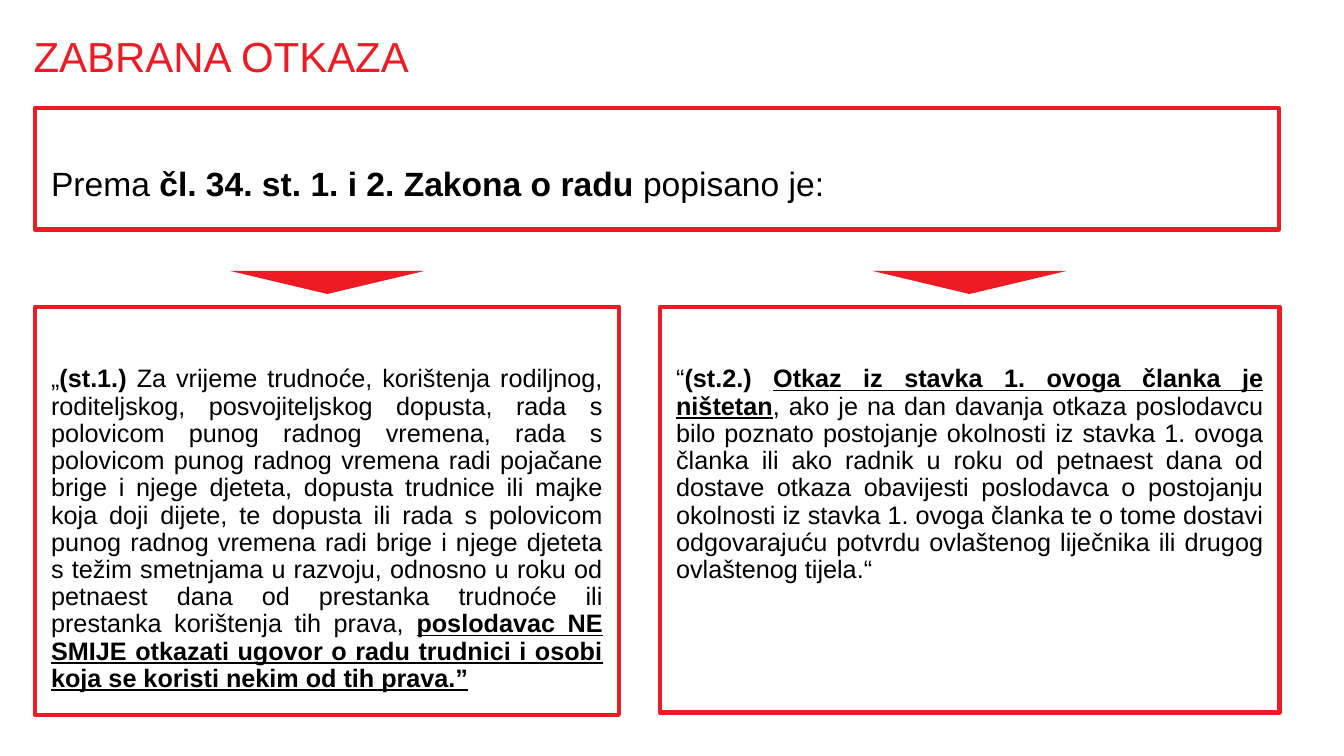
from pptx import Presentation
from pptx.dml.color import RGBColor
from pptx.enum.shapes import MSO_SHAPE
from pptx.enum.text import MSO_ANCHOR, MSO_AUTO_SIZE, PP_ALIGN
from pptx.util import Pt

RECTANGLE, TRIANGLE = MSO_SHAPE.RECTANGLE, MSO_SHAPE.ISOSCELES_TRIANGLE
TOP, MIDDLE = MSO_ANCHOR.TOP, MSO_ANCHOR.MIDDLE
LEFT, JUSTIFY = PP_ALIGN.LEFT, PP_ALIGN.JUSTIFY
NO_AUTOFIT = MSO_AUTO_SIZE.NONE

COLOURS = {"red": "ED1C24", "white": "FFFFFF", "black": "000000"}
PLAIN, BOLD, STRONG = (False, False), (True, False), (True, True)


class SlideBuilder:
    font = "Arial"
    box_margins = (11.5, 42.5, 11.5, 3.6)

    def __init__(self, page):
        self.page = page

    def colour(self, name):
        return RGBColor.from_string(COLOURS[name])

    def add_text(self, shape, spans, size, colour, align, margins, anchor):
        frame = shape.text_frame
        frame.word_wrap = True
        frame.auto_size = NO_AUTOFIT
        frame.vertical_anchor = anchor
        (frame.margin_left, frame.margin_top,
         frame.margin_right, frame.margin_bottom) = map(Pt, margins)
        para = frame.paragraphs[0]
        para.alignment = align
        para.line_spacing = 0.9
        para.space_before = Pt(0)
        for text, (bold, underline) in spans:
            span = para.add_run()
            span.text = text
            span.font.name = self.font
            span.font.size = Pt(size)
            span.font.bold = bold
            span.font.underline = underline
            span.font.color.rgb = self.colour(colour)

    def title(self, text, left, top, width, height):
        box = self.page.shapes.title
        box.left, box.top, box.width, box.height = map(Pt, (left, top, width, height))
        self.add_text(box, [(text, PLAIN)], 30, "red", LEFT, (0, 0, 0, 0), MIDDLE)

    def shape(self, kind, place, fill):
        shape = self.page.shapes.add_shape(kind, *map(Pt, place))
        shape.shadow.inherit = False
        shape.fill.solid()
        shape.fill.fore_color.rgb = self.colour(fill)
        return shape

    def framed_box(self, place, spans, size, align):
        box = self.shape(RECTANGLE, place, "white")
        box.line.color.rgb = self.colour("red")
        box.line.width = Pt(3)
        self.add_text(box, spans, size, "black", align, self.box_margins, TOP)

    def down_marker(self, left, top):
        marker = self.shape(TRIANGLE, (left, top, 139, 16.5), "red")
        marker.line.fill.background()
        marker.rotation = 180


def main():
    deck = Presentation()
    deck.slide_width, deck.slide_height = Pt(960), Pt(540)
    slide = SlideBuilder(deck.slides.add_slide(deck.slide_layouts[5]))

    # Heading
    slide.title("ZABRANA OTKAZA", 24, 26, 669, 32.5)

    # Legal basis
    slide.framed_box((25, 77, 888.5, 87), [
        ("Prema ", PLAIN),
        ("čl. 34. st. 1. i 2. Zakona o radu ", BOLD),
        ("popisano je:", PLAIN),
    ], 24, LEFT)

    # Paragraph 1: the prohibition
    slide.framed_box((25, 219, 417, 291.6), [
        ("„", PLAIN),
        ("(st.1.) ", BOLD),
        ("Za vrijeme trudnoće, korištenja rodiljnog, roditeljskog, posvojiteljskog "
         "dopusta, rada s polovicom punog radnog vremena, rada s polovicom punog "
         "radnog vremena radi pojačane brige i njege djeteta, dopusta trudnice ili "
         "majke koja doji dijete, te dopusta ili rada s polovicom punog radnog "
         "vremena radi brige i njege djeteta s težim smetnjama u razvoju, odnosno "
         "u roku od petnaest dana od prestanka trudnoće ili prestanka korištenja "
         "tih prava, ", PLAIN),
        ("poslodavac NE SMIJE otkazati ugovor o radu trudnici i osobi koja se "
         "koristi nekim od tih prava.”", STRONG),
    ], 18, JUSTIFY)

    # Paragraph 2: the consequence
    slide.framed_box((471.5, 219, 442.5, 290), [
        ("“", PLAIN),
        ("(st.2.) ", BOLD),
        ("Otkaz iz stavka 1. ovoga članka je ništetan", STRONG),
        (", ako je na dan davanja otkaza poslodavcu bilo poznato postojanje "
         "okolnosti iz stavka 1. ovoga članka ili ako radnik u roku od petnaest "
         "dana od dostave otkaza obavijesti poslodavca o postojanju okolnosti iz "
         "stavka 1. ovoga članka te o tome dostavi odgovarajuću potvrdu ovlaštenog "
         "liječnika ili drugog ovlaštenog tijela.“", PLAIN),
    ], 18, JUSTIFY)

    # Markers pointing to both paragraphs
    for left in (164.3, 623):
        slide.down_marker(left, 193.5)

    deck.save("out.pptx")


if __name__ == "__main__":
    main()
